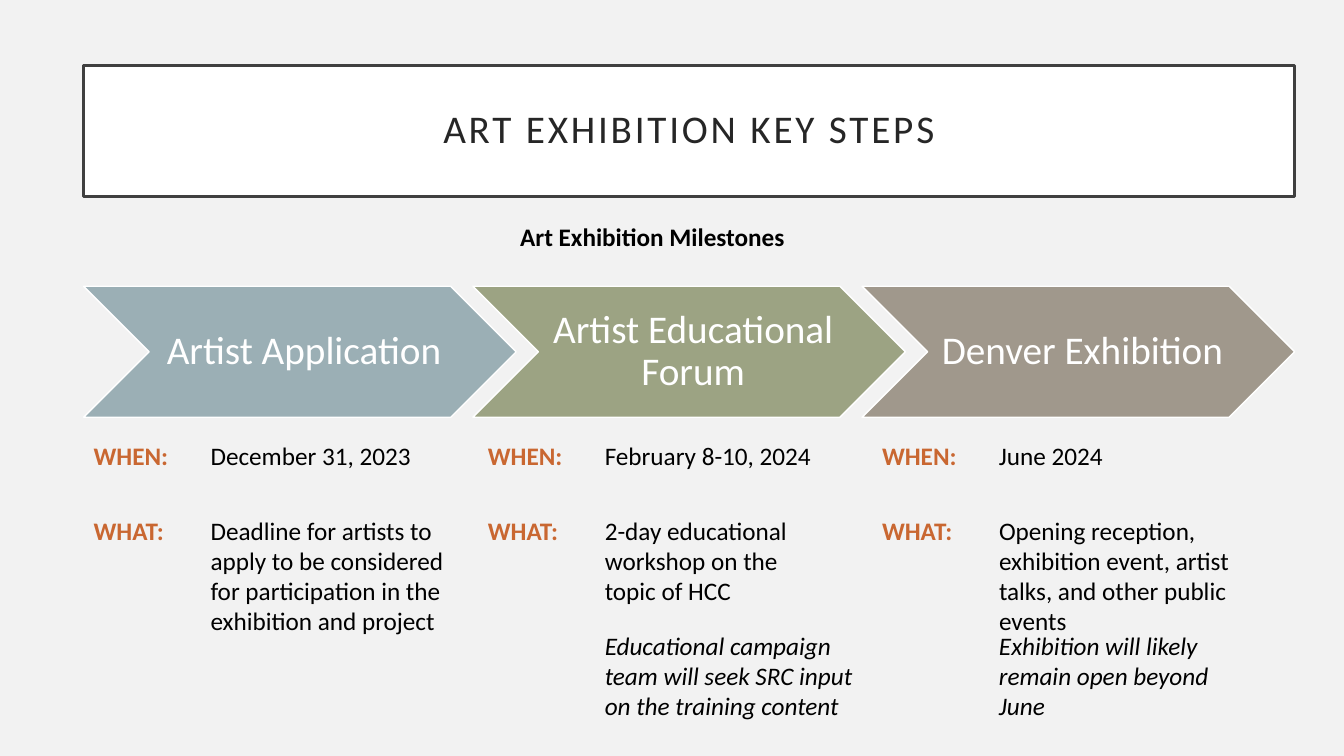
from pptx import Presentation
from pptx import util as u
from pptx.dml.color import RGBColor
from pptx.enum import shapes, text

Inches, Pt = u.Inches, u.Pt
FONT = "Calibri"
COLORS = {
    "background": "F2F2F2", "white": "FFFFFF", "border": "404040",
    "title": "262626", "body": "000000", "label": "C96731",
    "blue": "9BAFB5", "green": "9CA383", "taupe": "A0988C",
}

LEFT = 0.83
STEP_PITCH, COLUMN_PITCH = 3.86, 3.91
VALUE_OFFSET = 1.16
WHEN_TOP, WHAT_TOP, NOTE_TOP = 4.32, 5.06, 6.2
LINE_H, THREE_LINES_H, FOUR_LINES_H = 0.4, 1.01, 1.31

# Step name, colour, date, (description, width, height), (note, width)
STEPS = [
    ("Artist Application", "blue", "December 31, 2023",
     ("Deadline for artists to apply to be considered for participation "
      "in the exhibition and project", 2.72, FOUR_LINES_H), None),
    ("Artist Educational Forum", "green", "February 8-10, 2024",
     ("2-day educational workshop on the topic of HCC", 2.34, THREE_LINES_H),
     ("Educational campaign team will seek SRC input on the training content",
      2.74)),
    ("Denver Exhibition", "taupe", "June 2024",
     ("Opening reception, exhibition event, artist talks, and other public "
      "events", 3.02, THREE_LINES_H),
     ("Exhibition will likely remain open beyond June", 2.47)),
]


def rgb(name):
    return RGBColor.from_string(COLORS[name])


def write(sp, content, size, color, bold=False, italic=False):
    tf = sp.text_frame
    tf.word_wrap = True
    tf.text = content
    r = tf.paragraphs[0].runs[0]
    r.font.name, r.font.size = FONT, Pt(size)
    r.font.bold, r.font.italic = bold, italic
    r.font.color.rgb = rgb(color)
    return tf


def center(tf):
    tf.vertical_anchor = text.MSO_ANCHOR.MIDDLE
    p = tf.paragraphs[0]
    p.alignment = text.PP_ALIGN.CENTER
    p.line_spacing = 0.9


def set_margins(tf, left, others):
    tf.margin_left = Inches(left)
    tf.margin_top = tf.margin_right = tf.margin_bottom = Inches(others)


def add_shape(slide, kind, x, y, w, h, fill, line, weight):
    sp = slide.shapes.add_shape(kind, Inches(x), Inches(y), Inches(w), Inches(h))
    sp.shadow.inherit = False
    sp.fill.solid()
    sp.fill.fore_color.rgb = rgb(fill)
    sp.line.color.rgb = rgb(line)
    sp.line.width = Pt(weight)
    return sp


def add_textbox(slide, x, y, w, h):
    return slide.shapes.add_textbox(Inches(x), Inches(y), Inches(w), Inches(h))


def add_text(slide, content, x, y, w, h=LINE_H, color="body", **style):
    tf = write(add_textbox(slide, x, y, w, h), content, 18, color, **style)
    tf.auto_size = text.MSO_AUTO_SIZE.SHAPE_TO_FIT_TEXT


def add_title(slide, content):
    sp = add_shape(slide, shapes.MSO_SHAPE.RECTANGLE, LEFT, 0.65, 12.01, 1.3,
                   "white", "border", 2.5)
    tf = write(sp, content, 28, "title")
    set_margins(tf, 0.2, 0.2)
    center(tf)
    tf.paragraphs[0].runs[0].font._element.set("spc", "200")


def add_step(slide, x, name, color):
    y, h = 2.84, 1.3
    add_shape(slide, shapes.MSO_SHAPE.CHEVRON, x, y, 4.29, h, color, "white", 1)
    tf = write(add_textbox(slide, x + h / 2, y, 2.99, h), name, 28, "white")
    set_margins(tf, 0.12, 0.04)
    center(tf)


def add_details(slide, x, date, what, note):
    for label, y in (("WHEN:", WHEN_TOP), ("WHAT:", WHAT_TOP)):
        add_text(slide, label, x, y, 1.17, color="label", bold=True)
    value_x = x + VALUE_OFFSET
    add_text(slide, date, value_x, WHEN_TOP, 2.47)
    description, width, height = what
    add_text(slide, description, value_x, WHAT_TOP, width, height)
    if note:
        remark, width = note
        add_text(slide, remark, value_x, NOTE_TOP, width, THREE_LINES_H,
                 italic=True)


def main():
    prs = Presentation()
    prs.slide_width, prs.slide_height = Inches(13.33), Inches(7.5)
    slide = prs.slides.add_slide(prs.slide_layouts[6])
    slide.background.fill.solid()
    slide.background.fill.fore_color.rgb = rgb("background")

    # Headings
    add_title(slide, "ART EXHIBITION KEY STEPS")
    add_text(slide, "Art Exhibition Milestones", 5.06, 2.15, 3.21, bold=True)

    # Process steps with their details below
    for i, (name, color, date, what, note) in enumerate(STEPS):
        add_step(slide, LEFT + i * STEP_PITCH, name, color)
        add_details(slide, LEFT + i * COLUMN_PITCH, date, what, note)

    prs.save("out.pptx")


if __name__ == "__main__":
    main()
